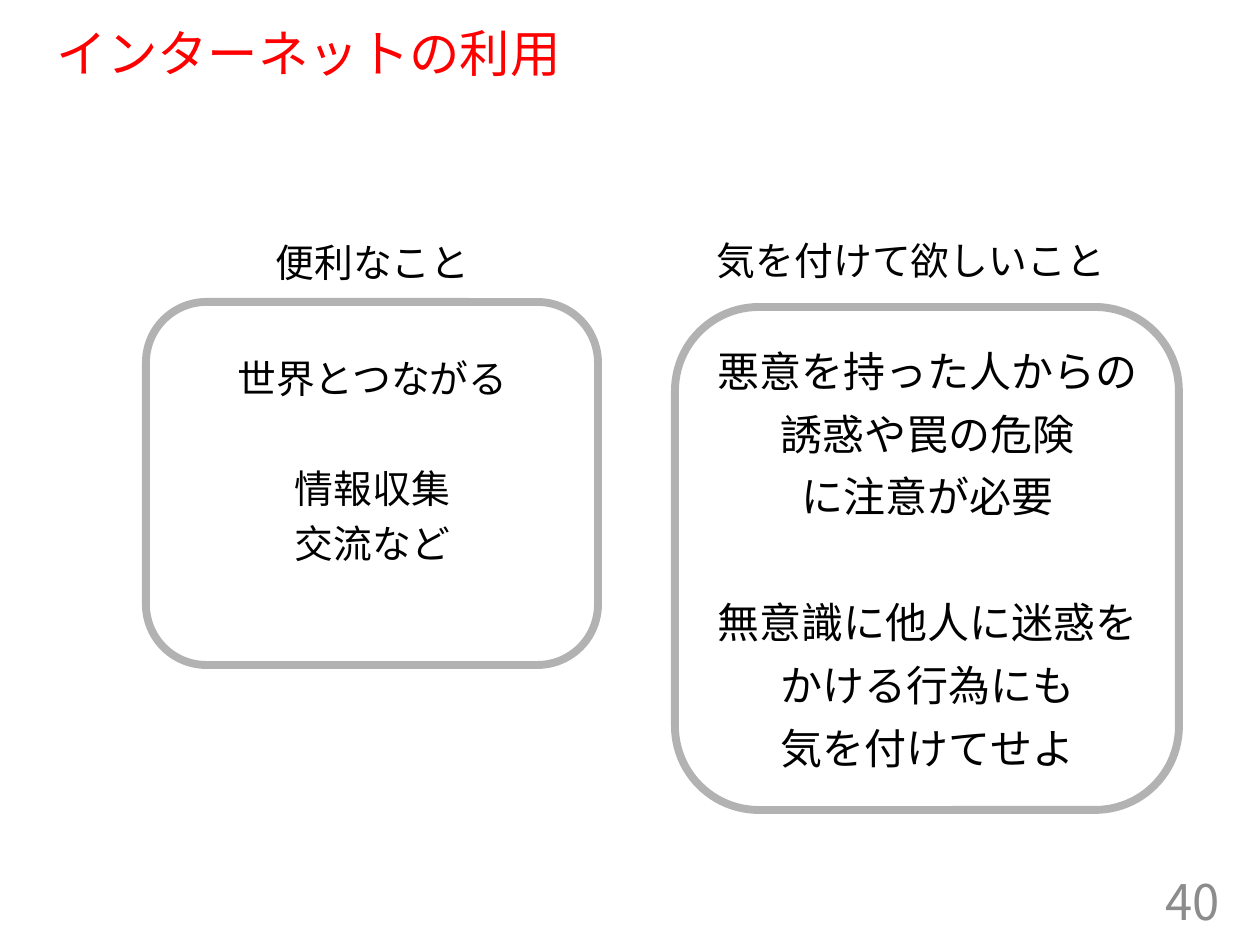
"""Build a slide on the benefits and the risks of using the internet."""
from lxml import etree
from pptx import Presentation
from pptx import util as u
from pptx.dml.color import RGBColor
from pptx.enum import shapes, text
from pptx.oxml.ns import qn

PX = 914400 / 126


def px(n):
    return u.Emu(round(n * PX))


def color(value):
    return RGBColor.from_string(value)


class Deck:
    font = "Noto Sans CJK JP"
    black, red, gray = "000000", "FF0000", "8C8C8C"
    left, center, right = text.PP_ALIGN.LEFT, text.PP_ALIGN.CENTER, text.PP_ALIGN.RIGHT
    top, middle = text.MSO_ANCHOR.TOP, text.MSO_ANCHOR.MIDDLE

    def __init__(self):
        self.prs = Presentation()
        self.prs.slide_width, self.prs.slide_height = px(1260), px(945)
        self.slide = self.prs.slides.add_slide(self.prs.slide_layouts[1])

    def set_text(self, sp, lines, size, hue=black, align=center, anchor=top,
                 spacing=0.9, gap_at=None, gap=0):
        tf = sp.text_frame
        tf.word_wrap = True
        tf.auto_size = text.MSO_AUTO_SIZE.NONE
        tf.vertical_anchor = anchor
        tf.text = "\n".join(lines)
        for i, p in enumerate(tf.paragraphs):
            p.alignment = align
            p.line_spacing = spacing
            p.space_before = u.Pt(gap if i == gap_at else 10 if i else 0)
            for r in p.runs:
                r.font.size = u.Pt(size)
                r.font.color.rgb = color(hue)
                r.font.name = self.font
                etree.SubElement(r.font._element, qn("a:ea"), typeface=self.font)

    def place(self, sp, box):
        sp.left, sp.top, sp.width, sp.height = map(px, box)

    def title(self, box, line):
        sp = self.slide.shapes.title
        self.place(sp, box)
        self.set_text(sp, [line], 28.8, self.red, self.left, self.middle)

    def body(self, box, lines, size):
        sp = self.slide.placeholders[1]
        self.place(sp, box)
        self.set_text(sp, lines, size)
        for p in sp.text_frame.paragraphs:
            pPr = p._p.get_or_add_pPr()
            pPr.set("marL", "0")
            pPr.set("indent", "0")
            etree.SubElement(pPr, qn("a:buNone"))

    def label(self, box, lines, size, **style):
        sp = self.slide.shapes.add_textbox(*map(px, box))
        tf = sp.text_frame
        tf.margin_left = tf.margin_right = px(8)
        tf.margin_top = tf.margin_bottom = px(4)
        self.set_text(sp, lines, size, **style)

    def number(self, box, value):
        sp = self.slide.shapes.add_textbox(*map(px, box))
        self.set_text(sp, [value], 28, self.gray, self.right, self.middle, 1.0)

    def frame(self, box):
        sp = self.slide.shapes.add_shape(
            shapes.MSO_SHAPE.ROUNDED_RECTANGLE, *map(px, box))
        sp.shadow.inherit = False
        sp.fill.background()
        sp.line.width = u.Pt(4.5)
        sp.line.color.rgb = color(self.black)
        clr = sp.line.fill._xPr.find(".//" + qn("a:srgbClr"))
        etree.SubElement(clr, qn("a:alpha"), val="30000")


def main():
    deck = Deck()
    deck.title((44, 24, 1166, 64), "インターネットの利用")
    deck.body((199, 238, 347, 55), ["便利なこと"], 22.2)
    deck.number((949, 876, 283, 50), "40")
    deck.label((702, 238, 418, 84), ["気を付けて欲しいこと"], 22.2)
    deck.label((199, 360, 347, 214), ["世界とつながる", "情報収集", "交流など"], 22.2,
               spacing=0.8, gap_at=1, gap=41.5)
    deck.frame((675, 307, 504, 503))
    deck.label((702, 347, 451, 214),
               ["悪意を持った人からの", "誘惑や罠の危険", "に注意が必要",
                "無意識に他人に迷惑を", "かける行為にも", "気を付けてせよ"], 24,
               gap_at=3, gap=46)
    deck.frame((146, 302, 452, 363))
    deck.prs.save("out.pptx")


if __name__ == "__main__":
    main()
